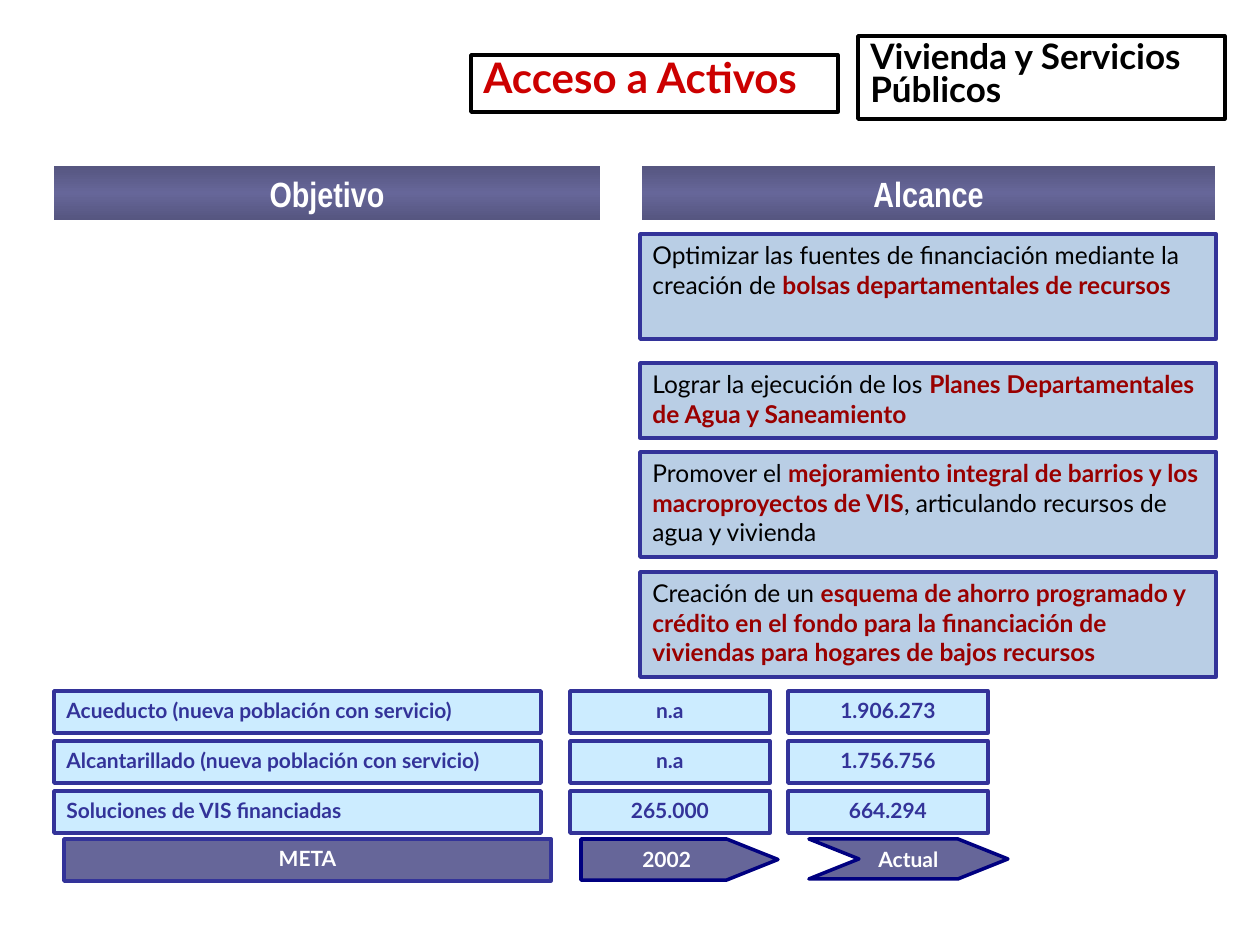
import copy
from dataclasses import dataclass

import pptx
import pptx.dml.color
import pptx.enum.shapes
import pptx.enum.text
import pptx.oxml.ns
import pptx.util

EMU_PER_PX = 914400 / 126
SHAPE = pptx.enum.shapes.MSO_SHAPE
ALIGN = pptx.enum.text.PP_ALIGN
ANCHOR = pptx.enum.text.MSO_ANCHOR


@dataclass(frozen=True)
class Theme:
    body_font: str = "Lato"
    header_font: str = "Arial Narrow"
    white: str = "FFFFFF"
    black: str = "000000"
    title_red: str = "CC0000"
    emphasis: str = "990000"
    indigo: str = "333399"
    navy: str = "000080"
    slate: str = "666699"
    slate_dark: str = "565680"
    scope_fill: str = "B9CEE5"
    row_fill: str = "CCECFF"
    title_size: int = 24
    header_size: int = 20
    scope_size: int = 14
    row_size: int = 12
    border: int = 2


THEME = Theme()

SCOPE = [
    (234, 105, [("Optimizar las fuentes de financiación mediante la creación de ", False),
                ("bolsas departamentales de recursos", True)]),
    (363, 75, [("Lograr la ejecución de los ", False),
               ("Planes Departamentales de Agua y Saneamiento", True)]),
    (452, 105, [("Promover el ", False),
                ("mejoramiento integral de barrios y los macroproyectos de VIS", True),
                (", articulando recursos de agua y vivienda", False)]),
    (572, 105, [("Creación de un ", False),
                ("esquema de ahorro programado y crédito en el fondo para la financiación "
                 "de viviendas para hogares de bajos recursos", True)]),
]

GOALS = [
    ("Acueducto (nueva población con servicio)", "n.a", "1.906.273"),
    ("Alcantarillado (nueva población con servicio)", "n.a", "1.756.756"),
    ("Soluciones de VIS financiadas", "265.000", "664.294"),
]
GOAL_COLUMNS = [(54, 487, ALIGN.LEFT), (570, 200, ALIGN.CENTER), (788, 200, ALIGN.CENTER)]
GOAL_TOP, GOAL_STEP, GOAL_HEIGHT = 691, 50, 42


def px(value):
    return pptx.util.Emu(round(value * EMU_PER_PX))


def rgb(color):
    return pptx.dml.color.RGBColor.from_string(color)


def add_box(shapes, bounds, fill=None, line=None, kind=SHAPE.RECTANGLE):
    box = shapes.add_shape(kind, *map(px, bounds))
    box.shadow.inherit = False
    if fill:
        box.fill.solid()
        box.fill.fore_color.rgb = rgb(fill)
    if line:
        box.line.color.rgb = rgb(line)
        box.line.width = pptx.util.Pt(THEME.border)
    else:
        box.line.fill.background()
    return box


def write(box, pieces, size, align=ALIGN.LEFT, font=THEME.body_font, anchor=ANCHOR.TOP):
    frame = box.text_frame
    frame.word_wrap = True
    frame.vertical_anchor = anchor
    paragraph = frame.paragraphs[0]
    paragraph.alignment = align
    for text, color, bold in pieces:
        run = paragraph.add_run()
        run.text = text
        run.font.name = font
        run.font.size = pptx.util.Pt(size)
        run.font.bold = bold
        run.font.color.rgb = rgb(color)
    return paragraph


def add_title(shapes, bounds, text, size, color):
    box = add_box(shapes, bounds, THEME.white, THEME.black)
    write(box, [(text, color, True)], size).line_spacing = 0.8


def add_header(shapes, bounds, text):
    box = add_box(shapes, bounds)
    box.fill.gradient()
    box.fill.gradient_angle = 270
    first = box.fill.gradient_stops[0]
    first.color.rgb = rgb(THEME.slate_dark)
    first.position = 0
    last = box.fill.gradient_stops[1]
    last.color.rgb = rgb(THEME.slate_dark)
    last.position = 1
    stop_list = box.fill._fill._gradFill.find(pptx.oxml.ns.qn("a:gsLst"))
    stop_list.insert(1, copy.deepcopy(stop_list[0]))
    middle = box.fill.gradient_stops[1]
    middle.color.rgb = rgb(THEME.slate)
    middle.position = 0.5
    write(box, [(text, THEME.white, True)], THEME.header_size, ALIGN.CENTER, THEME.header_font)


def add_scope(shapes, top, height, pieces):
    box = add_box(shapes, (640, top, 576, height), THEME.scope_fill, THEME.indigo)
    styled = [(text, THEME.emphasis if strong else THEME.black, strong)
              for text, strong in pieces]
    write(box, styled, THEME.scope_size)


def add_goal_row(shapes, top, values):
    row = shapes.add_group_shape().shapes
    for (left, width, align), value in zip(GOAL_COLUMNS, values):
        box = add_box(row, (left, top, width, GOAL_HEIGHT), THEME.row_fill, THEME.indigo)
        write(box, [(value, THEME.indigo, True)], THEME.row_size, align)


def add_legend(shapes):
    legend = shapes.add_group_shape().shapes
    parts = [
        ("META", SHAPE.RECTANGLE, (64, 839, 487, 42), THEME.indigo, ANCHOR.TOP),
        ("2002", SHAPE.PENTAGON, (581, 839, 197, 41), THEME.navy, ANCHOR.MIDDLE),
        ("Actual", SHAPE.CHEVRON, (809, 839, 199, 40), THEME.navy, ANCHOR.MIDDLE),
    ]
    for text, kind, bounds, line, anchor in parts:
        box = add_box(legend, bounds, THEME.slate, line, kind)
        write(box, [(text, THEME.white, True)], THEME.row_size, ALIGN.CENTER, anchor=anchor)
        if kind != SHAPE.RECTANGLE:
            box.adjustments[0] = 1.25
            box.text_frame.word_wrap = False


def main():
    deck = pptx.Presentation()
    deck.slide_width = px(1260)
    deck.slide_height = px(945)
    shapes = deck.slides.add_slide(deck.slide_layouts[6]).shapes

    add_header(shapes, (642, 166, 573, 54), "Alcance")
    add_header(shapes, (54, 166, 546, 54), "Objetivo")
    for top, height, pieces in SCOPE:
        add_scope(shapes, top, height, pieces)
    add_legend(shapes)
    for index, values in enumerate(GOALS):
        add_goal_row(shapes, GOAL_TOP + index * GOAL_STEP, values)
    add_title(shapes, (471, 55, 367, 57), "Acceso a Activos", THEME.title_size, THEME.title_red)
    add_title(shapes, (858, 36, 367, 83), "Vivienda y Servicios Públicos",
              THEME.header_size, THEME.black)
    deck.save("out.pptx")


if __name__ == "__main__":
    main()
